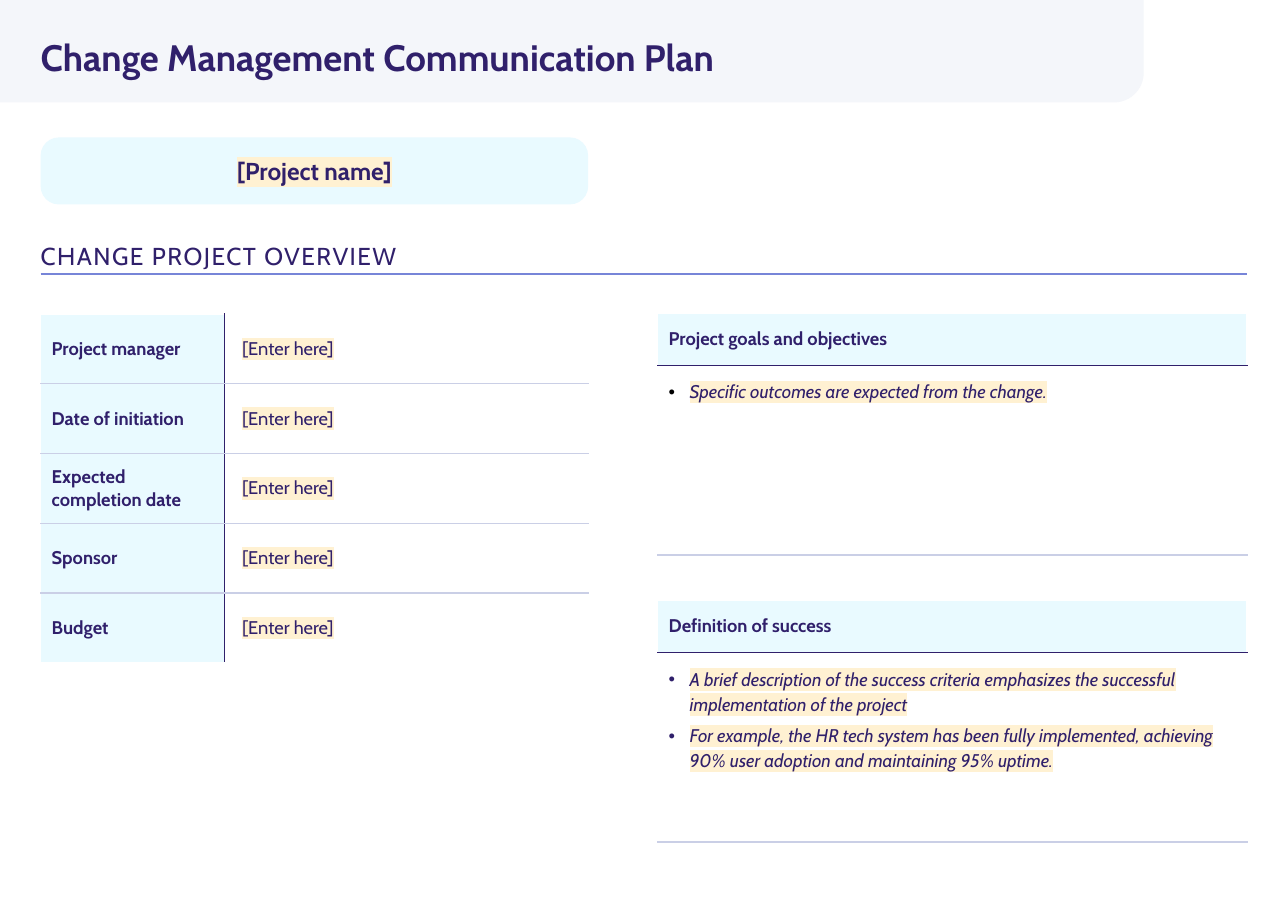
from dataclasses import dataclass

import pptx
import pptx.dml.color
import pptx.enum.shapes
import pptx.enum.text
import pptx.oxml
import pptx.oxml.ns
import pptx.util
from pptx.util import Pt

SHAPES = pptx.enum.shapes.MSO_SHAPE
MIDDLE = pptx.enum.text.MSO_ANCHOR.MIDDLE
CENTER = pptx.enum.text.PP_ALIGN.CENTER


@dataclass(frozen=True)
class Theme:
    font: str = "Cabin"
    ink: str = "30206B"
    band: str = "F4F6FA"
    panel: str = "E9FAFF"
    marker: str = "FFF1D2"
    rule: str = "7785D8"
    grid: str = "CACFE6"
    black: str = "000000"
    title: float = 24
    heading: float = 16
    body: float = 12


THEME = Theme()
LEFT = 26.6
RIGHT = 815
GOALS_LEFT = 429.8
PROJECT_FIELDS = ["Project manager", "Date of initiation",
                  "Expected completion date", "Sponsor", "Budget"]
GOALS = ["Specific outcomes are expected from the change."]
SUCCESS = [
    "A brief description of the success criteria emphasizes the successful "
    "implementation of the project",
    "For example, the HR tech system has been fully implemented, achieving "
    "90% user adoption and maintaining 95% uptime.",
]


def rgb(color):
    return pptx.dml.color.RGBColor.from_string(color)


def element(tag, content="", **attributes):
    """Build a DrawingML element from its tag, attributes and inner XML."""
    listed = "".join(f' {name}="{value}"' for name, value in attributes.items())
    namespace = pptx.oxml.ns.nsdecls("a")
    return pptx.oxml.parse_xml(f"<a:{tag} {namespace}{listed}>{content}</a:{tag}>")


def solid(color):
    return f'<a:solidFill><a:srgbClr val="{color}"/></a:solidFill>'


def add_span(para, text, size, bold=False, italic=False, marked=False, tracking=0):
    span = para.add_run()
    span.text = text
    font = span.font
    font.name, font.size = THEME.font, Pt(size)
    font.bold, font.italic = bold, italic
    font.color.rgb = rgb(THEME.ink)
    properties = span._r.get_or_add_rPr()
    if tracking:
        properties.set("spc", str(tracking * 100))
    if marked:
        fill = properties.find(pptx.oxml.ns.qn("a:solidFill"))
        fill.addnext(element("highlight", f'<a:srgbClr val="{THEME.marker}"/>'))


def add_panel(page, kind, left, top, width, height, color, corner):
    panel = page.shapes.add_shape(kind, Pt(left), Pt(top), Pt(width), Pt(height))
    panel.shadow.inherit = False
    panel.adjustments[0] = corner
    panel.fill.solid()
    panel.fill.fore_color.rgb = rgb(color)
    panel.line.fill.background()
    return panel


def add_heading(page, text, top, width, height, spacing, size, **style):
    box = page.shapes.add_textbox(Pt(LEFT), Pt(top), Pt(width), Pt(height))
    frame = box.text_frame
    frame.word_wrap = True
    frame.margin_left = frame.margin_top = 0
    frame.margin_right = frame.margin_bottom = 0
    para = frame.paragraphs[0]
    para.line_spacing = spacing
    add_span(para, text, size, **style)


def add_rule(page, top):
    rule = page.shapes.add_connector(
        pptx.enum.shapes.MSO_CONNECTOR.STRAIGHT, Pt(LEFT), Pt(top), Pt(RIGHT), Pt(top))
    rule.line.color.rgb = rgb(THEME.rule)
    rule.line.width = Pt(1.5)
    rule._element.spPr.append(element("effectLst"))


def add_grid(page, left, top, widths, heights):
    frame = page.shapes.add_table(len(heights), len(widths), Pt(left), Pt(top),
                                  Pt(sum(widths)), Pt(sum(heights)))
    table = frame.table
    table.first_row = table.horz_banding = False
    for column, width in zip(table.columns, widths):
        column.width = Pt(width)
    for row, height in zip(table.rows, heights):
        row.height = Pt(height)
    return table


def style_cell(cell, fill=None, **borders):
    """Set the fill and the 1 pt borders, given as left, right, top, bottom colours."""
    properties = cell._tc.get_or_add_tcPr()
    for side in ("left", "right", "top", "bottom"):
        if borders.get(side):
            properties.append(element("ln" + side[0].upper(), solid(borders[side]),
                                      w=Pt(1)))
    if fill:
        cell.fill.solid()
        cell.fill.fore_color.rgb = rgb(fill)
    else:
        cell.fill.background()


def add_bullet(para, text, color, space_after):
    para.line_spacing = 1.12
    para.space_after = Pt(space_after)
    properties = para._p.get_or_add_pPr()
    properties.set("marL", str(Pt(13.7)))
    properties.set("indent", str(-Pt(13.7)))
    properties.append(element("buClr", f'<a:srgbClr val="{color}"/>'))
    properties.append(element("buFont", typeface="Arial"))
    properties.append(element("buChar", char="•"))
    add_span(para, text, THEME.body, italic=True, marked=True)


def add_fields_table(page):
    table = add_grid(page, LEFT, 205.2, [120.2, 237.6], [45.6] * len(PROJECT_FIELDS))
    for index, name in enumerate(PROJECT_FIELDS):
        label, entry = table.cell(index, 0), table.cell(index, 1)
        above = THEME.grid if index else None
        below = THEME.grid if index < len(PROJECT_FIELDS) - 1 else None
        style_cell(label, THEME.panel, right=THEME.ink, top=above, bottom=below)
        style_cell(entry, left=THEME.ink, top=above, bottom=below)
        label.vertical_anchor = entry.vertical_anchor = MIDDLE
        entry.margin_left = Pt(11.5)
        add_span(label.text_frame.paragraphs[0], name, THEME.body, bold=True)
        add_span(entry.text_frame.paragraphs[0], "[Enter here]", THEME.body, marked=True)


def add_bullet_table(page, top, title, items, bullet_color, space_after=0):
    table = add_grid(page, GOALS_LEFT, top, [RIGHT - GOALS_LEFT], [34.2, 124])
    header, content = table.cell(0, 0), table.cell(1, 0)
    style_cell(header, THEME.panel, bottom=THEME.ink)
    style_cell(content, top=THEME.ink, bottom=THEME.grid)
    header.vertical_anchor = MIDDLE
    add_span(header.text_frame.paragraphs[0], title, THEME.body, bold=True)
    content.margin_top = content.margin_bottom = Pt(8.6)
    frame = content.text_frame
    for index, item in enumerate(items):
        para = frame.add_paragraph() if index else frame.paragraphs[0]
        add_bullet(para, item, bullet_color, space_after)


def main():
    deck = pptx.Presentation()
    deck.slide_width, deck.slide_height = Pt(841.7), Pt(595.4)
    page = deck.slides.add_slide(deck.slide_layouts[6])

    band = add_panel(page, SHAPES.ROUND_1_RECTANGLE, 0, 0, 747.4, 67, THEME.band, 0.29)
    band._element.spPr.xfrm.set("flipV", "1")
    add_heading(page, "Change Management Communication Plan", 25.9, 720, 46, 0.9,
                THEME.title, bold=True)

    project = add_panel(page, SHAPES.ROUNDED_RECTANGLE, LEFT, 89.8, 357.8, 43.8,
                        THEME.panel, 0.27)
    project.text_frame.vertical_anchor = MIDDLE
    para = project.text_frame.paragraphs[0]
    para.alignment = CENTER
    add_span(para, "[Project name]", THEME.heading, bold=True, marked=True)

    add_heading(page, "CHANGE PROJECT OVERVIEW", 154.8, 385, 25, 1.13,
                THEME.heading, tracking=1)
    add_fields_table(page)
    add_rule(page, 179.1)
    add_bullet_table(page, 204.5, "Project goals and objectives", GOALS, THEME.black)
    add_bullet_table(page, 392.2, "Definition of success", SUCCESS, THEME.ink, 4)
    deck.save("out.pptx")


if __name__ == "__main__":
    main()
